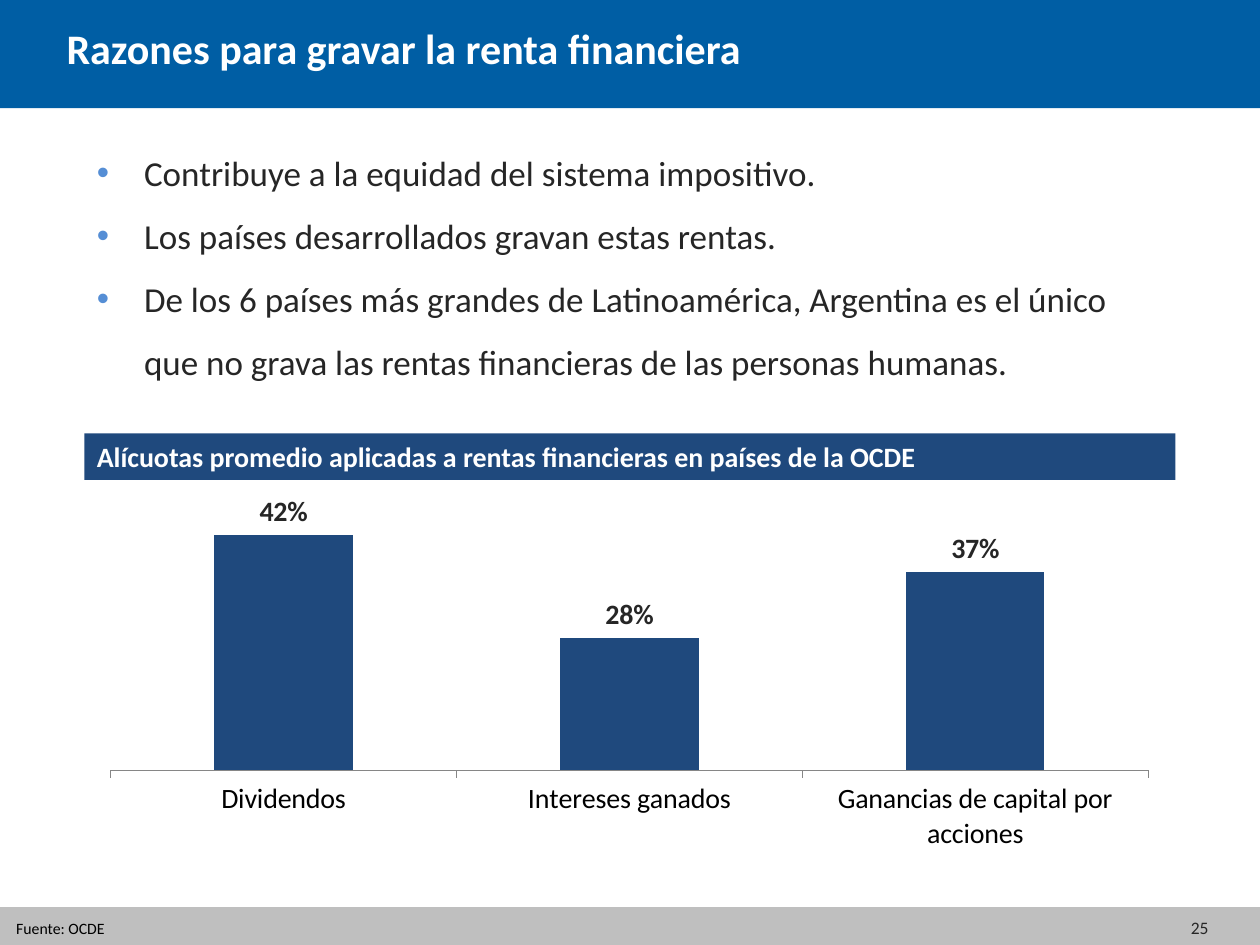
from lxml.etree import SubElement
from pptx import Presentation
from pptx.chart.data import CategoryChartData
from pptx.dml.color import RGBColor
from pptx.enum.chart import XL_CHART_TYPE, XL_LABEL_POSITION, XL_TICK_LABEL_POSITION, XL_TICK_MARK
from pptx.enum.shapes import MSO_SHAPE
from pptx.enum.text import MSO_ANCHOR, PP_ALIGN
from pptx.oxml import parse_xml
from pptx.oxml.ns import nsdecls, qn
from pptx.util import Pt

FONT = "Calibri"
WHITE = RGBColor(0xFF, 0xFF, 0xFF)
BLACK = RGBColor(0, 0, 0)
INK = RGBColor(0x26, 0x26, 0x26)
BLUE = RGBColor(0x00, 0x5E, 0xA4)
NAVY = RGBColor(0x1F, 0x49, 0x7D)
SKY = RGBColor(0x55, 0x8E, 0xD5)
GRAY = RGBColor(0xBF, 0xBF, 0xBF)
AXIS = RGBColor(0x86, 0x86, 0x86)

LEFT, WIDTH = 48.24, 623.52


def set_font(font, size, color, bold=False):
    font.name = FONT
    font.size = Pt(size)
    font.color.rgb = color
    font.bold = bold


def write(frame, text, size=20, color=INK, bold=False, align=PP_ALIGN.LEFT,
          anchor=MSO_ANCHOR.TOP, spacing=None, bullet=None):
    frame.word_wrap = True
    frame.vertical_anchor = anchor
    for index, line in enumerate(text.split("\n")):
        para = frame.paragraphs[0] if index == 0 else frame.add_paragraph()
        para.alignment = align
        para.line_spacing = spacing
        span = para.add_run()
        span.text = line
        set_font(span.font, size, color, bold)
        if bullet:
            add_bullet(para, bullet)


def add_bullet(para, color, indent=27):
    properties = para._p.get_or_add_pPr()
    properties.set("marL", str(Pt(indent)))
    properties.set("indent", str(-Pt(indent)))
    tint = SubElement(properties, qn("a:buClr"))
    SubElement(tint, qn("a:srgbClr")).set("val", str(color))
    SubElement(properties, qn("a:buFont")).set("typeface", "Arial")
    SubElement(properties, qn("a:buChar")).set("char", "•")


class Builder:
    def __init__(self):
        self.deck = Presentation()
        self.deck.slide_width, self.deck.slide_height = Pt(720), Pt(540)
        self.page = self.deck.slides.add_slide(self.deck.slide_layouts[6])

    def band(self, left, top, width, height, fill, line=None):
        box = self.page.shapes.add_shape(
            MSO_SHAPE.RECTANGLE, Pt(left), Pt(top), Pt(width), Pt(height))
        box.shadow.inherit = False
        box.fill.solid()
        box.fill.fore_color.rgb = fill
        if line:
            box.line.color.rgb = line
            box.line.width = Pt(2)
        else:
            box.line.fill.background()
        return box

    def text(self, left, top, width, height, text, **style):
        box = self.page.shapes.add_textbox(Pt(left), Pt(top), Pt(width), Pt(height))
        write(box.text_frame, text, **style)

    def columns(self, left, top, width, height, rates):
        data = CategoryChartData(number_format="0%")
        data.categories = list(rates)
        data.add_series("Alícuota", list(rates.values()))
        chart = self.page.shapes.add_chart(
            XL_CHART_TYPE.COLUMN_CLUSTERED, Pt(left), Pt(top), Pt(width), Pt(height), data).chart
        set_font(chart.font, 16, BLACK)
        chart.has_legend = False
        chart.has_title = False
        self.style_axes(chart)
        self.style_bars(chart.plots[0])
        self.place_plot(chart, x=0.024, y=0.052, w=0.951, h=0.666)

    def style_axes(self, chart):
        category, value = chart.category_axis, chart.value_axis
        category.major_tick_mark = XL_TICK_MARK.OUTSIDE
        category.tick_label_position = XL_TICK_LABEL_POSITION.LOW
        category.format.line.color.rgb = AXIS
        category.format.line.width = Pt(0.75)
        value.minimum_scale, value.maximum_scale = 0.1, 0.45
        value.has_major_gridlines = False
        value.visible = False

    def style_bars(self, plot):
        plot.gap_width = 150
        plot.vary_by_categories = False
        fill = plot.series[0].format.fill
        fill.solid()
        fill.fore_color.rgb = NAVY
        plot.has_data_labels = True
        labels = plot.data_labels
        labels.show_value = True
        labels.number_format = "0%"
        labels.number_format_is_linked = False
        labels.position = XL_LABEL_POSITION.OUTSIDE_END
        set_font(labels.font, 16, INK, bold=True)

    def place_plot(self, chart, **fractions):
        sizes = "".join(f'<c:{name} val="{part}"/>' for name, part in fractions.items())
        layout = parse_xml(
            f'<c:layout {nsdecls("c")}><c:manualLayout><c:layoutTarget val="inner"/>'
            f'<c:xMode val="edge"/><c:yMode val="edge"/>{sizes}</c:manualLayout></c:layout>')
        area = chart._chartSpace.chart.plotArea
        for old in area.findall(qn("c:layout")):
            area.remove(old)
        area.insert(0, layout)


def main():
    slide = Builder()
    slide.band(0, 0, 720, 61.92, BLUE)
    slide.band(0, 519.12, 720, 20.88, GRAY, line=GRAY)
    slide.text(529.92, 515.52, 167.76, 28.8, "25", size=10,
               align=PP_ALIGN.RIGHT, anchor=MSO_ANCHOR.MIDDLE)
    slide.text(30.96, 9.36, WIDTH, 36, "Razones para gravar la renta financiera",
               size=24, color=WHITE, bold=True)
    slide.text(LEFT, 71.28, WIDTH, 149.04,
               "Contribuye a la equidad del sistema impositivo.\n"
               "Los países desarrollados gravan estas rentas.\n"
               "De los 6 países más grandes de Latinoamérica, Argentina es el único "
               "que no grava las rentas financieras de las personas humanas.",
               spacing=1.5, bullet=SKY)
    heading = slide.band(LEFT, 247.68, WIDTH, 26.64, NAVY)
    write(heading.text_frame,
          "Alícuotas promedio aplicadas a rentas financieras en países de la OCDE",
          size=16, color=WHITE, bold=True, anchor=MSO_ANCHOR.MIDDLE)
    slide.columns(LEFT, 281.52, WIDTH, 221.04, {
        "Dividendos": 0.42,
        "Intereses ganados": 0.28,
        "Ganancias de capital por acciones": 0.37,
    })
    slide.text(2.16, 516.96, 280.08, 27.36, "Fuente: OCDE", size=9, color=BLACK,
               anchor=MSO_ANCHOR.MIDDLE)
    slide.deck.save("out.pptx")


if __name__ == "__main__":
    main()
